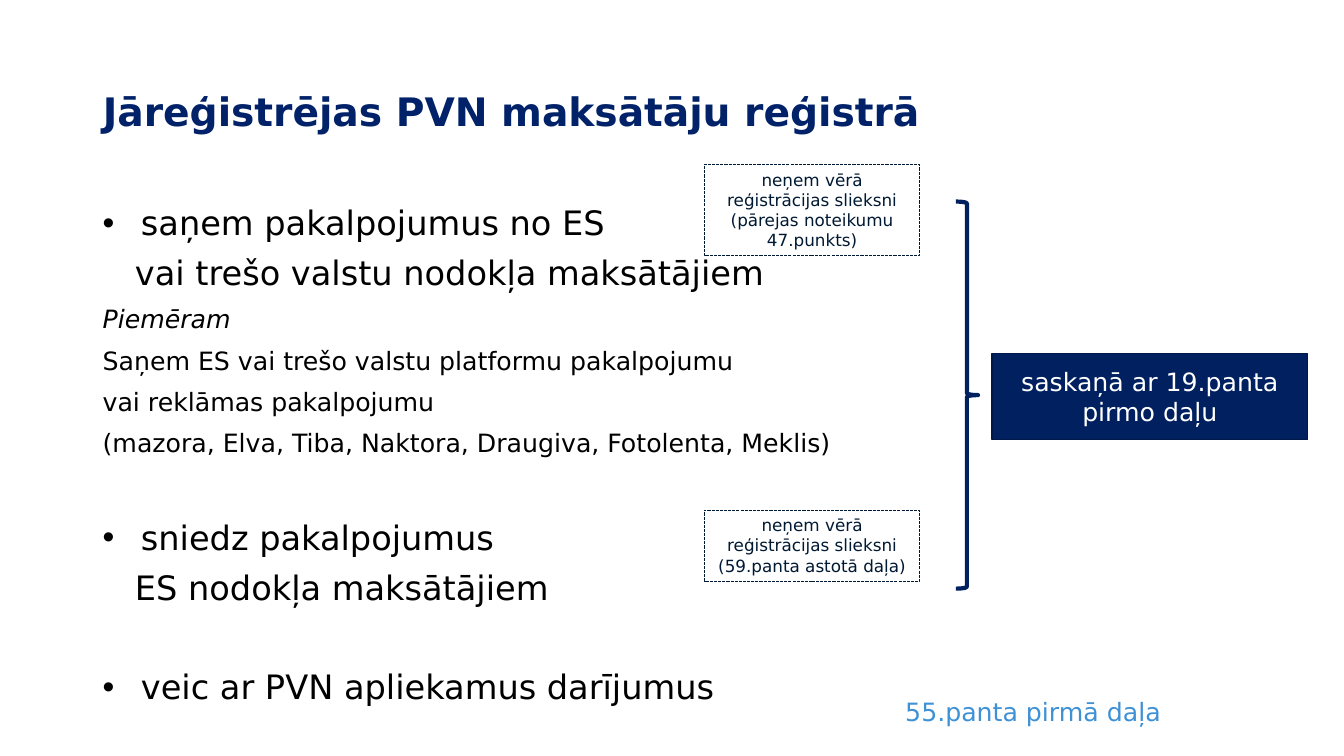
from lxml import etree
from pptx import Presentation
from pptx.dml.color import RGBColor
from pptx.enum.dml import MSO_LINE
from pptx.enum.shapes import MSO_SHAPE
from pptx.enum.text import MSO_ANCHOR, PP_ALIGN
from pptx.oxml.ns import qn
from pptx.util import Inches, Pt

FONT = "DejaVu Sans"
TITLE_BLUE = RGBColor(0x01, 0x22, 0x69)
NAVY = RGBColor(0x00, 0x20, 0x60)
NAVY_EDGE = RGBColor(0x00, 0x18, 0x47)
NOTE_BLUE = RGBColor(0x00, 0x19, 0x33)
LIGHT_BLUE = RGBColor(0x3F, 0x91, 0xD5)
BLACK = RGBColor(0, 0, 0)
WHITE = RGBColor(0xFF, 0xFF, 0xFF)


def format_text(p, size, color, bold=False, italic=False):
    for r in p.runs:
        r.font.name = FONT
        r.font.size = Pt(size)
        r.font.color.rgb = color
        r.font.bold = bold
        r.font.italic = italic


def add_box(shape, text, left, top, width, height, size, color, line, line_width):
    sp = s.shapes.add_shape(shape, Inches(left), Inches(top), Inches(width), Inches(height))
    sp.shadow.inherit = False
    sp.fill.background()
    sp.line.color.rgb = line
    sp.line.width = Pt(line_width)
    if text:
        sp.text_frame.word_wrap = True
        p = sp.text_frame.paragraphs[0]
        p.text = text
        p.alignment = PP_ALIGN.CENTER
        format_text(p, size, color)
    return sp


prs = Presentation()
prs.slide_width = Inches(13.33)
prs.slide_height = Inches(7.5)
s = prs.slides.add_slide(prs.slide_layouts[5])

title = s.shapes.title
title.left, title.top = Inches(0.92), Inches(0.4)
title.width, title.height = Inches(9.13), Inches(1.45)
tf = title.text_frame
tf.text = "Jāreģistrējas PVN maksātāju reģistrā"
tf.vertical_anchor = MSO_ANCHOR.MIDDLE
p = tf.paragraphs[0]
p.alignment = PP_ALIGN.LEFT
p.line_spacing = 0.9
format_text(p, 28, TITLE_BLUE, bold=True)

body = [
    ("saņem pakalpojumus no ES", "bullet", 0),
    ("vai trešo valstu nodokļa maksātājiem", "continued", 10),
    ("Piemēram", "example", 10),
    ("Saņem ES vai trešo valstu platformu pakalpojumu", "detail", 10),
    ("vai reklāmas pakalpojumu", "detail", 10),
    ("(mazora, Elva, Tiba, Naktora, Draugiva, Fotolenta, Meklis)", "detail", 10),
    ("sniedz pakalpojumus", "bullet", 45),
    ("ES nodokļa maksātājiem", "continued", 10),
    ("veic ar PVN apliekamus darījumus", "bullet", 45),
]
tf = s.shapes.add_textbox(Inches(0.92), Inches(2), Inches(11.5), Inches(4.87)).text_frame
tf.word_wrap = True
for i, (text, kind, before) in enumerate(body):
    p = tf.add_paragraph() if i else tf.paragraphs[0]
    p.text = text
    p.line_spacing = 0.9
    p.space_before = Pt(before)
    pPr = p._p.get_or_add_pPr()
    if kind == "bullet":
        pPr.set("marL", str(Inches(0.38)))
        pPr.set("indent", str(-Inches(0.38)))
        etree.SubElement(pPr, qn("a:buFont"), typeface="Arial")
        etree.SubElement(pPr, qn("a:buChar"), char="•")
    elif kind == "continued":
        pPr.set("marL", str(Inches(0.32)))
    size = 24 if kind in ("bullet", "continued") else 18
    format_text(p, size, BLACK, italic=kind == "example")

tf = s.shapes.add_textbox(Inches(8.88), Inches(6.86), Inches(3.11), Inches(0.4)).text_frame
tf.word_wrap = True
tf.text = "55.panta pirmā daļa"
format_text(tf.paragraphs[0], 18, LIGHT_BLUE)

add_box(MSO_SHAPE.RIGHT_BRACE, "", 9.48, 2, 0.22, 3.84, 18, NAVY, NAVY, 3)
sp = add_box(MSO_SHAPE.RECTANGLE, "saskaņā ar 19.panta pirmo daļu",
             9.84, 3.51, 3.13, 0.85, 18, WHITE, NAVY_EDGE, 1)
sp.fill.solid()
sp.fill.fore_color.rgb = NAVY
sp.text_frame.vertical_anchor = MSO_ANCHOR.MIDDLE

notes = [
    ("neņem vērā reģistrācijas slieksni (59.panta astotā daļa)", 5.06, 0.71),
    ("neņem vērā reģistrācijas slieksni (pārejas noteikumu 47.punkts)", 1.63, 0.91),
]
for text, top, height in notes:
    sp = add_box(MSO_SHAPE.RECTANGLE, text, 6.99, top, 2.13, height, 12, NOTE_BLUE, NOTE_BLUE, 0.75)
    sp.line.dash_style = MSO_LINE.SQUARE_DOT
    sp.text_frame.vertical_anchor = MSO_ANCHOR.TOP

prs.save("out.pptx")
